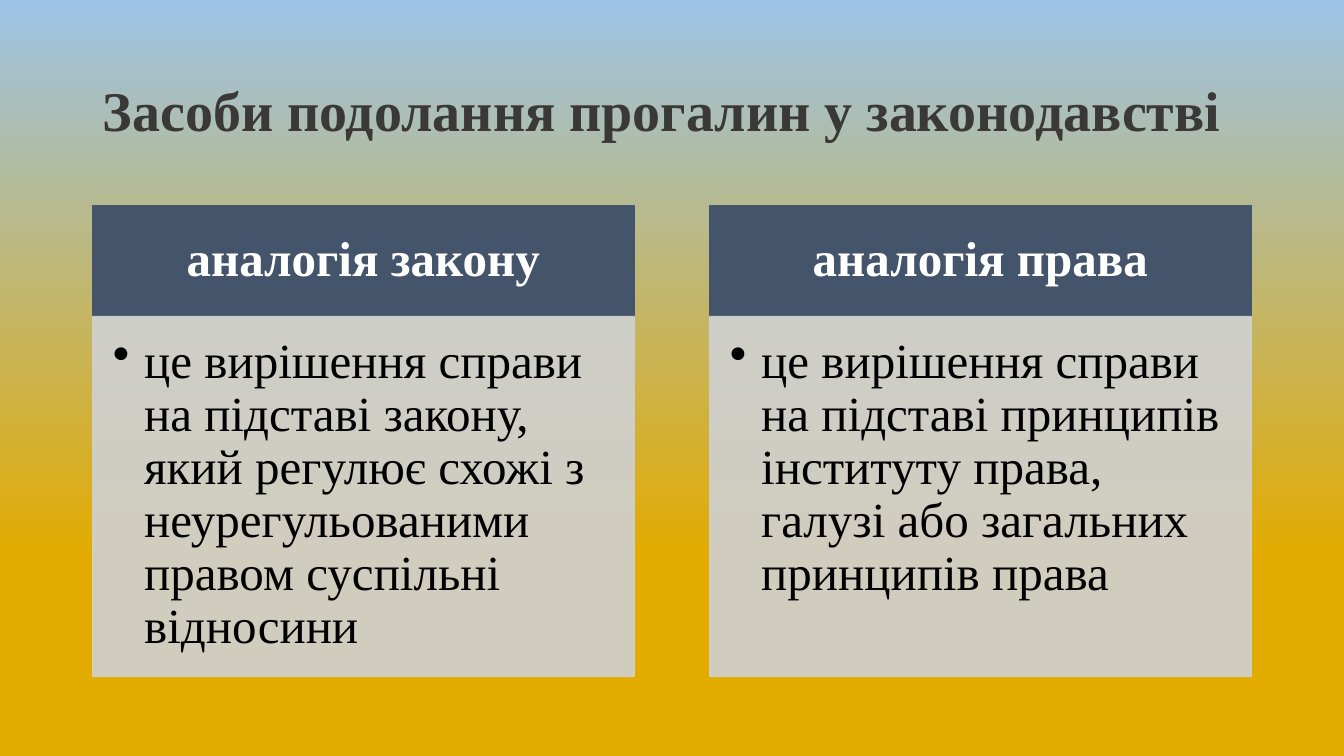
from lxml import etree
from pptx import Presentation
from pptx.dml.color import RGBColor
from pptx.enum.shapes import MSO_SHAPE
from pptx.enum.text import MSO_ANCHOR, MSO_AUTO_SIZE, PP_ALIGN
from pptx.oxml.ns import qn
from pptx.util import Inches, Pt

RECT = MSO_SHAPE.RECTANGLE
TOP, MIDDLE = MSO_ANCHOR.TOP, MSO_ANCHOR.MIDDLE
LEFT, CENTER = PP_ALIGN.LEFT, PP_ALIGN.CENTER
FIT_NONE = MSO_AUTO_SIZE.NONE
NAVY, GREY = "44546A", "CFD1D4"


def rgb(value):
    return RGBColor.from_string(value)


def write(s, text, size, color, bold, align, anchor, insets):
    tf = s.text_frame
    tf.word_wrap = True
    tf.auto_size = FIT_NONE
    tf.vertical_anchor = anchor
    (tf.margin_left, tf.margin_top,
     tf.margin_right, tf.margin_bottom) = [Inches(i) for i in insets]
    p = tf.paragraphs[0]
    p.alignment = align
    p.line_spacing = 0.9
    r = p.add_run()
    r.text = text
    r.font.name = "Times New Roman"
    r.font.size = Pt(size)
    r.font.bold = bold
    r.font.color.rgb = rgb(color)
    return p


prs = Presentation()
prs.slide_width, prs.slide_height = Inches(13.33), Inches(7.5)
slide = prs.slides.add_slide(prs.slide_layouts[5])

# Background: gold at the bottom, blue at the top
bg = slide.background.fill
bg.gradient()
bg.gradient_angle = 90
for stop, (position, color) in zip(bg.gradient_stops,
                                   [(0.26, "E3AB00"), (1, "9DC3E6")]):
    stop.position = position
    stop.color.rgb = rgb(color)

# Title
title = slide.shapes.title
title.left, title.top = Inches(0.92), Inches(0.4)
title.width, title.height = Inches(11.5), Inches(1.45)
write(title, "Засоби подолання прогалин у законодавстві", 40, "3B3838", True,
      LEFT, MIDDLE, (0.1, 0.05, 0.1, 0.05))

# Two columns: heading bar above a translucent panel
columns = [
    ("аналогія закону",
     "це вирішення справи на підставі закону, який регулює схожі з "
     "неурегульованими правом суспільні відносини"),
    ("аналогія права",
     "це вирішення справи на підставі принципів інституту права, "
     "галузі або загальних принципів права"),
]
for i, (heading, body) in enumerate(columns):
    x = 0.92 + i * 6.12
    bar = slide.shapes.add_shape(RECT, Inches(x), Inches(2.04),
                                 Inches(5.37), Inches(1.1))
    panel = slide.shapes.add_shape(RECT, Inches(x), Inches(3.14),
                                   Inches(5.37), Inches(3.57))
    for s, color in [(bar, NAVY), (panel, GREY)]:
        s.shadow.inherit = False
        s.fill.solid()
        s.fill.fore_color.rgb = rgb(color)
        s.line.color.rgb = rgb(color)
        s.line.width = Pt(1)

    # 90 % opacity for the panel's fill and line
    for clr in panel._element.spPr.iter(qn("a:srgbClr")):
        etree.SubElement(clr, qn("a:alpha"), val="90000")

    write(bar, heading, 35, "FFFFFF", True, CENTER, MIDDLE,
          (0.27, 0.16, 0.27, 0.16))
    p = write(panel, body, 35, "000000", False, LEFT, TOP,
              (0.2, 0.2, 0.27, 0.31))

    # Bullet with hanging indent
    p.level = 1
    pPr = p._p.get_or_add_pPr()
    pPr.set("marL", str(Inches(0.31)))
    pPr.set("indent", str(-Inches(0.31)))
    etree.SubElement(pPr, qn("a:buChar"), char="•")

prs.save("out.pptx")
